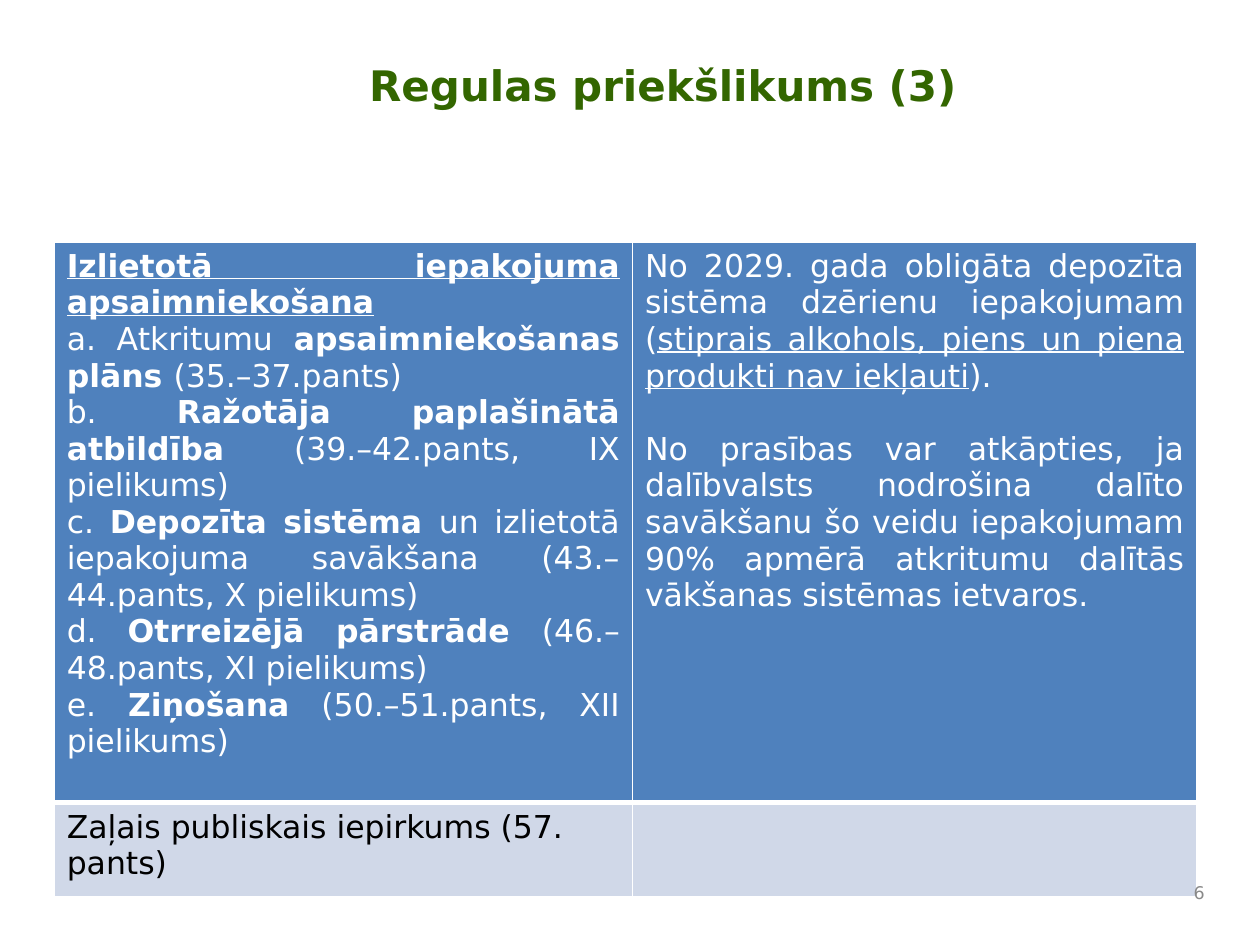
from lxml import etree
from pptx import Presentation
from pptx.dml.color import RGBColor
from pptx.enum.text import MSO_ANCHOR, PP_ALIGN
from pptx.oxml.ns import qn
from pptx.util import Inches, Pt

LEFT, RIGHT, JUSTIFY = PP_ALIGN.LEFT, PP_ALIGN.RIGHT, PP_ALIGN.JUSTIFY
TOP, MIDDLE = MSO_ANCHOR.TOP, MSO_ANCHOR.MIDDLE
FONT = "DejaVu Sans"
GREEN, WHITE, BLACK, GREY = "336600", "FFFFFF", "000000", "898989"
HEADER_FILL, BODY_FILL = "4F81BD", "D0D8E8"

TITLE = "Regulas priekšlikums (3)"
PAGE_NUMBER = "6"
MANAGEMENT = [
    [("Izlietotā iepakojuma apsaimniekošana", "bu")],
    [("a. Atkritumu ", ""), ("apsaimniekošanas plāns ", "b"), ("(35.–37.pants)", "")],
    [("b. ", ""), ("Ražotāja paplašinātā atbildība ", "b"), ("(39.–42.pants, IX pielikums)", "")],
    [("c. ", ""), ("Depozīta sistēma ", "b"),
     ("un izlietotā iepakojuma savākšana (43.–44.pants, X pielikums)", "")],
    [("d. ", ""), ("Otrreizējā pārstrāde ", "b"), ("(46.–48.pants, XI pielikums)", "")],
    [("e. ", ""), ("Ziņošana", "b"), (" (50.–51.pants, XII pielikums)", "")],
]
DEPOSIT = [
    [("No 2029. gada obligāta depozīta sistēma dzērienu iepakojumam (", ""),
     ("stiprais alkohols, piens un piena produkti nav iekļauti", "u"), (").", "")],
    [("No prasības var atkāpties, ja dalībvalsts nodrošina dalīto savākšanu šo veidu "
      "iepakojumam 90% apmērā atkritumu dalītās vākšanas sistēmas ietvaros.", "")],
]
PROCUREMENT = [[("Zaļais publiskais iepirkums (57. pants)", "")]]

COLUMN_WIDTHS = [4.59, 4.48]
ROWS = [
    dict(height=4.45, fill=HEADER_FILL, color=WHITE, align=JUSTIFY, bottom=3,
         cells=[(MANAGEMENT, 0), (DEPOSIT, 21)]),
    dict(height=0.75, fill=BODY_FILL, color=BLACK, align=LEFT, bottom=1,
         cells=[(PROCUREMENT, 0), ([], 0)]),
]


def rgb(value):
    return RGBColor.from_string(value)


def write(frame, paragraphs, size, color, align, gap=0):
    for index, spans in enumerate(paragraphs):
        para = frame.add_paragraph() if index else frame.paragraphs[0]
        para.alignment = align
        if index and gap:
            para.space_before = Pt(gap)
        for text, style in spans:
            span = para.add_run()
            span.text = text
            font = span.font
            font.name, font.size, font.color.rgb = FONT, Pt(size), rgb(color)
            font.bold, font.underline = "b" in style, "u" in style


def add_borders(cell, top, bottom):
    properties = cell._tc.get_or_add_tcPr()
    for side, width in (("L", 1), ("R", 1), ("T", top), ("B", bottom)):
        line = etree.SubElement(properties, qn("a:ln" + side), w=str(Pt(width)))
        fill = etree.SubElement(line, qn("a:solidFill"))
        etree.SubElement(fill, qn("a:srgbClr"), val=WHITE)


def add_title(page):
    title = page.shapes.title
    title.left, title.top = Inches(2.83), Inches(0.42)
    title.width, title.height = Inches(6.67), Inches(1.13)
    title.text_frame.vertical_anchor = TOP
    write(title.text_frame, [[(TITLE, "b")]], 24, GREEN, LEFT)


def add_regulation_table(page):
    table = page.shapes.add_table(
        len(ROWS), len(COLUMN_WIDTHS), Inches(0.43), Inches(1.92),
        Inches(sum(COLUMN_WIDTHS)), Inches(sum(row["height"] for row in ROWS))).table
    table.first_row = table.horz_banding = False
    for column, width in zip(table.columns, COLUMN_WIDTHS):
        column.width = Inches(width)
    top = 1
    for row_index, row in enumerate(ROWS):
        table.rows[row_index].height = Inches(row["height"])
        for column_index, (paragraphs, gap) in enumerate(row["cells"]):
            cell = table.cell(row_index, column_index)
            add_borders(cell, top, row["bottom"])
            cell.fill.solid()
            cell.fill.fore_color.rgb = rgb(row["fill"])
            write(cell.text_frame, paragraphs, 18, row["color"], row["align"], gap)
        top = row["bottom"]


def add_page_number(page):
    box = page.shapes.add_textbox(Inches(9.33), Inches(6.92), Inches(0.33), Inches(0.33))
    box.text_frame.word_wrap = True
    box.text_frame.vertical_anchor = MIDDLE
    write(box.text_frame, [[(PAGE_NUMBER, "")]], 10, GREY, RIGHT)


def main():
    deck = Presentation()
    deck.slide_width, deck.slide_height = Inches(10), Inches(7.5)
    page = deck.slides.add_slide(deck.slide_layouts[5])
    add_title(page)
    add_regulation_table(page)
    add_page_number(page)
    deck.save("out.pptx")


if __name__ == "__main__":
    main()
